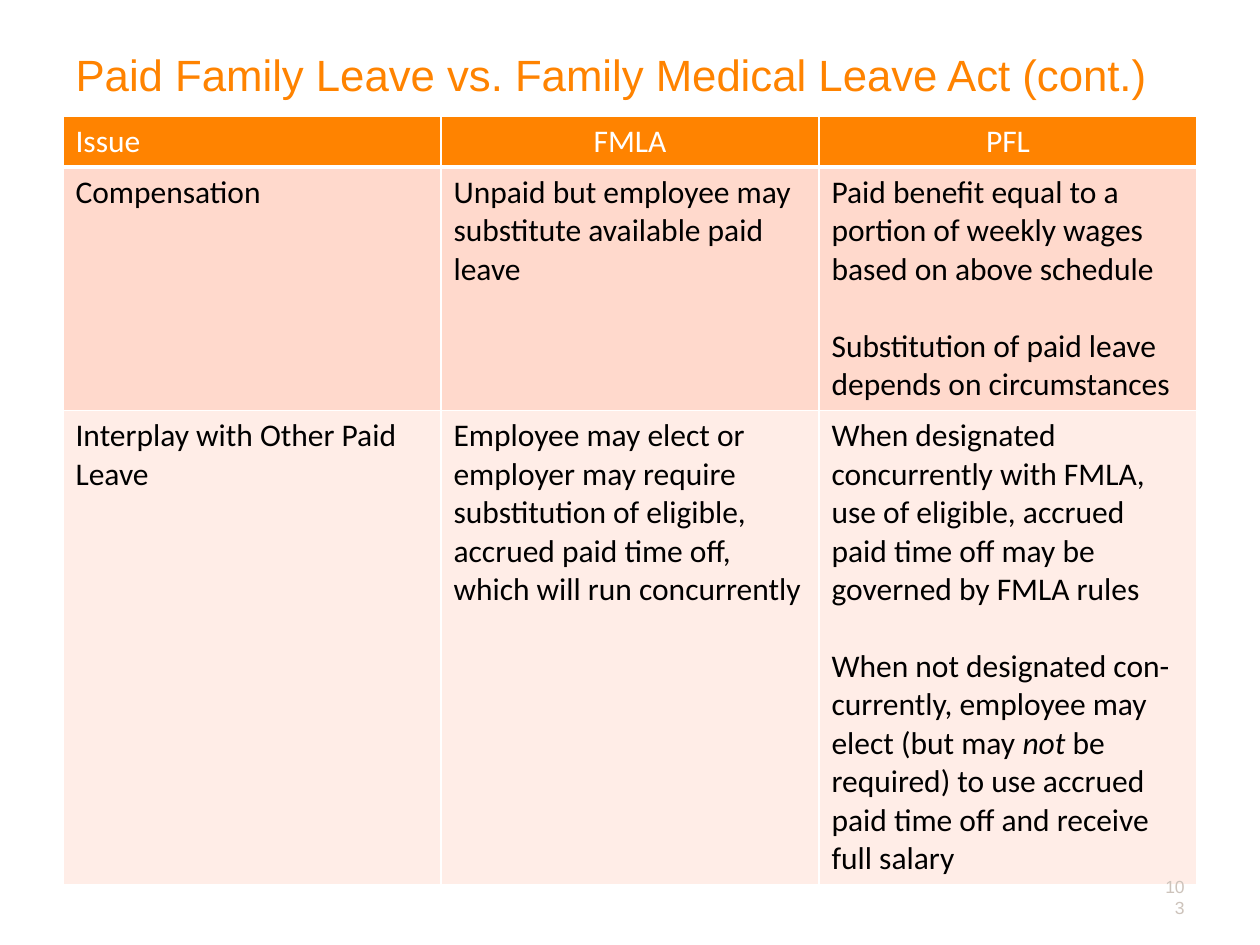
from dataclasses import dataclass

from lxml.etree import SubElement
from pptx import Presentation
from pptx.dml.color import RGBColor
from pptx.enum.text import MSO_ANCHOR, MSO_AUTO_SIZE, PP_ALIGN
from pptx.oxml.ns import qn
from pptx.util import Emu, Pt


@dataclass(frozen=True)
class Theme:
    orange: str = "FF8300"
    white: str = "FFFFFF"
    black: str = "000000"
    grey: str = "CDC3BB"
    bands: tuple = ("FFD9CC", "FFEDE7")
    heading_font: str = "Arial"
    table_font: str = "Calibri"
    title_size: int = 25
    table_size: int = 18
    number_size: int = 10
    paragraph_gap: int = 22


@dataclass(frozen=True)
class Span:
    text: str
    italic: bool = False


@dataclass(frozen=True)
class Row:
    height: int
    cells: tuple  # each cell is a list of paragraphs, each a list of spans


THEME = Theme()
LEFT, WIDTH = 63, 1134

ROWS = (
    Row(51, ([[Span("Issue")]], [[Span("FMLA")]], [[Span("PFL")]])),
    Row(243, (
        [[Span("Compensation")]],
        [[Span("Unpaid but employee may substitute available paid leave")]],
        [[Span("Paid benefit equal to a portion of weekly wages based on above schedule")],
         [Span("Substitution of paid leave depends on circumstances")]],
    )),
    Row(473, (
        [[Span("Interplay with Other Paid Leave")]],
        [[Span("Employee may elect or employer may require substitution of eligible, "
               "accrued paid time off, which will run concurrently")]],
        [[Span("When designated concurrently with FMLA, use of eligible, accrued "
               "paid time off may be governed by FMLA rules")],
         [Span("When not designated con-currently, employee may elect (but may "),
          Span("not", italic=True),
          Span(" be required) to use accrued paid time off and receive full salary")]],
    )),
)


def px(length: int) -> Emu:
    return Emu(round(length * 914400 / 126))


def write(frame, paragraphs: list, *, font: str, size: int, color: str,
          align=PP_ALIGN.LEFT, gap: int = 0) -> None:
    for index, spans in enumerate(paragraphs):
        para = frame.paragraphs[0] if index == 0 else frame.add_paragraph()
        para.alignment = align
        para.space_before = Pt(gap if index else 0)
        for span in spans:
            run = para.add_run()
            run.text = span.text
            run.font.name = font
            run.font.size = Pt(size)
            run.font.color.rgb = RGBColor.from_string(color)
            if span.italic:
                run.font.italic = True


def set_borders(cell, bottom: int) -> None:
    properties = cell._tc.get_or_add_tcPr()
    for side, points in (("L", 1), ("R", 1), ("T", 1), ("B", bottom)):
        line = SubElement(properties, qn(f"a:ln{side}"), w=str(Pt(points)))
        fill = SubElement(line, qn("a:solidFill"))
        SubElement(fill, qn("a:srgbClr"), val=THEME.white)


def add_title(page, text: str) -> None:
    title = page.shapes.title
    title.left, title.top, title.width, title.height = px(LEFT), px(38), px(WIDTH), px(157)
    frame = title.text_frame
    frame.word_wrap = True
    frame.auto_size = MSO_AUTO_SIZE.NONE
    frame.vertical_anchor = MSO_ANCHOR.TOP
    frame.margin_top = px(10)
    write(frame, [[Span(text)]], font=THEME.heading_font, size=THEME.title_size,
          color=THEME.orange)


def add_comparison(page, rows: tuple) -> None:
    columns = len(rows[0].cells)
    table = page.shapes.add_table(len(rows), columns, px(LEFT), px(116), px(WIDTH),
                                  px(sum(row.height for row in rows))).table
    for column in table.columns:
        column.width = px(WIDTH // columns)
    for row_index, row in enumerate(rows):
        table.rows[row_index].height = px(row.height)
        header = row_index == 0
        for column_index, paragraphs in enumerate(row.cells):
            cell = table.cell(row_index, column_index)
            set_borders(cell, bottom=3 if header else 1)
            cell.fill.solid()
            cell.fill.fore_color.rgb = RGBColor.from_string(
                THEME.orange if header else THEME.bands[row_index - 1])
            write(cell.text_frame, paragraphs, font=THEME.table_font, size=THEME.table_size,
                  color=THEME.white if header else THEME.black, gap=THEME.paragraph_gap,
                  align=PP_ALIGN.CENTER if header and column_index else PP_ALIGN.LEFT)
            if header:
                for para in cell.text_frame.paragraphs:
                    for run in para.runs:
                        run.font.bold = False


def add_page_number(page, text: str) -> None:
    box = page.shapes.add_textbox(px(1144), px(872), px(53), px(50))
    frame = box.text_frame
    frame.word_wrap = True
    frame.vertical_anchor = MSO_ANCHOR.MIDDLE
    write(frame, [[Span(text)]], font=THEME.heading_font, size=THEME.number_size,
          color=THEME.grey, align=PP_ALIGN.RIGHT)


def main() -> None:
    deck = Presentation()
    deck.slide_width, deck.slide_height = px(1260), px(945)
    page = deck.slides.add_slide(deck.slide_layouts[5])

    # Heading
    add_title(page, "Paid Family Leave vs. Family Medical Leave Act (cont.)")
    # Comparison of the two kinds of leave
    add_comparison(page, ROWS)
    # Page number
    add_page_number(page, "103")

    deck.save("out.pptx")


if __name__ == "__main__":
    main()
